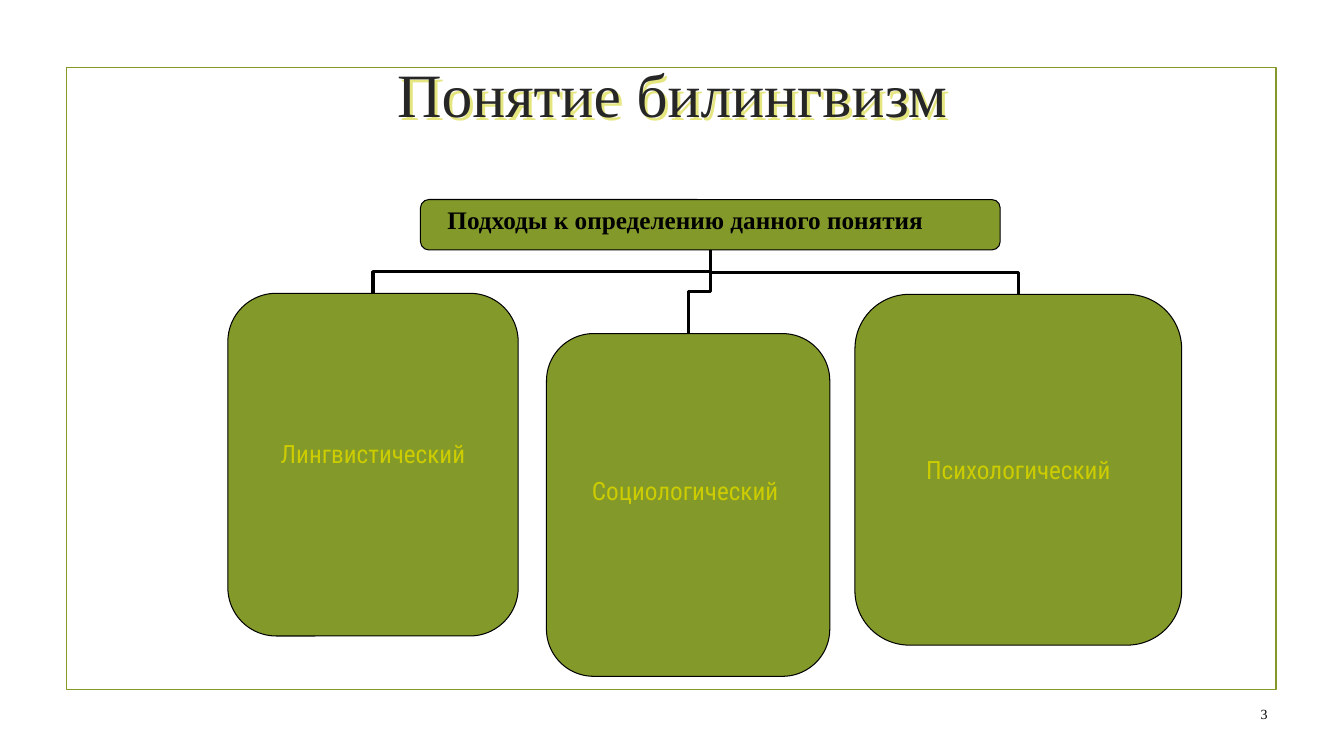
import pptx
import pptx.dml.color
import pptx.enum.shapes
import pptx.enum.text
import pptx.oxml
import pptx.oxml.ns
import pptx.util
from dataclasses import dataclass
from pptx.util import Inches

Shape = pptx.enum.shapes.MSO_SHAPE
Align = pptx.enum.text.PP_ALIGN
Anchor = pptx.enum.text.MSO_ANCHOR


@dataclass(frozen=True)
class Theme:
    olive: str = "83992A"
    black: str = "000000"
    title_ink: str = "262626"
    title_shadow: str = "E6E680"
    yellow: str = "CCCC00"
    serif: str = "Times New Roman"
    condensed: str = "Roboto Condensed"
    title_size: int = 44
    label_size: int = 18
    number_size: int = 10


THEME = Theme()
ROOT_BOX = (4.17, 1.98, 5.75, 0.5)
# Text, box, bottom inset that lifts the text above the middle
APPROACHES = [
    ("Лингвистический", (2.26, 2.91, 2.88, 3.4), 0.27),
    ("Социологический ", (5.42, 3.31, 2.81, 3.4), 0.33),
    ("Психологический", (8.48, 2.92, 3.24, 3.48), 0.04),
]


def rgb(colour):
    return pptx.dml.color.RGBColor.from_string(colour)


def set_attributes(target, values):
    for name, value in values.items():
        setattr(target, name, value)


def write_text(shape, text, font, size, colour, align, bold=False, **frame):
    """Fill a shape with one formatted line; frame holds text frame settings."""
    set_attributes(shape.text_frame, {"word_wrap": True, **frame})
    para = shape.text_frame.paragraphs[0]
    para.alignment = align
    span = para.add_run()
    span.text = text
    set_attributes(span.font, {"name": font, "size": pptx.util.Pt(size), "bold": bold})
    span.font.color.rgb = rgb(colour)


def add_text(slide, place, text, size, colour, align, **options):
    box = slide.shapes.add_textbox(*map(Inches, place))
    write_text(box, text, THEME.serif, size, colour, align, **options)
    return box


def add_panel(slide, kind, place, fill, line, width):
    panel = slide.shapes.add_shape(kind, *map(Inches, place))
    panel.shadow.inherit = False
    if fill:
        panel.fill.solid()
        panel.fill.fore_color.rgb = rgb(fill)
    else:
        panel.fill.background()
    panel.line.color.rgb = rgb(line)
    panel.line.width = pptx.util.Pt(width)
    return panel


def add_branch(slide, parent, child):
    """Join the parent's bottom to the child's top by an elbow turned 90 degrees."""
    start_x, start_y = parent[0] + parent[2] / 2, parent[1] + parent[3]
    end_x, end_y = child[0] + child[2] / 2, child[1]
    middle_x, middle_y = (start_x + end_x) / 2, (start_y + end_y) / 2
    half_run, half_drop = (end_x - start_x) / 2, (end_y - start_y) / 2
    ends = (middle_x - half_drop, middle_y + half_run,
            middle_x + half_drop, middle_y - half_run)
    branch = slide.shapes.add_connector(
        pptx.enum.shapes.MSO_CONNECTOR.ELBOW, *map(Inches, ends))
    branch.line.color.rgb = rgb(THEME.black)
    branch.line.width = pptx.util.Pt(2.25)
    properties = branch.element.spPr
    properties.find(pptx.oxml.ns.qn("a:xfrm")).set("rot", "5400000")
    properties.append(pptx.oxml.parse_xml(
        f"<a:effectLst {pptx.oxml.ns.nsdecls('a')}/>"))


def add_title(slide):
    title = add_text(slide, (0.67, 0.3, 12, 1.25), "Понятие билингвизм",
                     THEME.title_size, THEME.title_ink, Align.CENTER,
                     vertical_anchor=Anchor.MIDDLE)
    title.element.spPr.append(pptx.oxml.parse_xml(
        f"<a:effectLst {pptx.oxml.ns.nsdecls('a')}>"
        '<a:outerShdw dist="38100" dir="2700000" algn="tl" rotWithShape="0">'
        f'<a:srgbClr val="{THEME.title_shadow}"/></a:outerShdw></a:effectLst>'))


def add_approach(slide, text, place, bottom):
    panel = add_panel(slide, Shape.ROUNDED_RECTANGLE, place,
                      THEME.olive, THEME.black, 0.75)
    write_text(panel, text, THEME.condensed, THEME.label_size, THEME.yellow,
               Align.CENTER, word_wrap=False, vertical_anchor=Anchor.MIDDLE,
               margin_left=Inches(0.07), margin_right=Inches(0.07),
               margin_top=Inches(0.04), margin_bottom=Inches(bottom))


def main():
    deck = pptx.Presentation()
    set_attributes(deck, {"slide_width": Inches(13.33), "slide_height": Inches(7.5)})
    slide = deck.slides.add_slide(deck.slide_layouts[6])

    add_panel(slide, Shape.RECTANGLE, (0.66, 0.67, 12, 6.17), None, THEME.olive, 1.25)
    add_text(slide, (9.56, 6.83, 3.11, 0.5), "3", THEME.number_size, THEME.black,
             Align.RIGHT, vertical_anchor=Anchor.MIDDLE)
    add_title(slide)

    for _, place, _ in APPROACHES:
        add_branch(slide, ROOT_BOX, place)
    add_panel(slide, Shape.ROUNDED_RECTANGLE, ROOT_BOX, THEME.olive, THEME.black, 0.75)
    for text, place, bottom in APPROACHES:
        add_approach(slide, text, place, bottom)
    add_text(slide, (4.34, 1.98, 5.86, 0.4), "Подходы к определению данного понятия",
             THEME.label_size, THEME.black, Align.LEFT, bold=True)

    deck.save("out.pptx")


if __name__ == "__main__":
    main()
